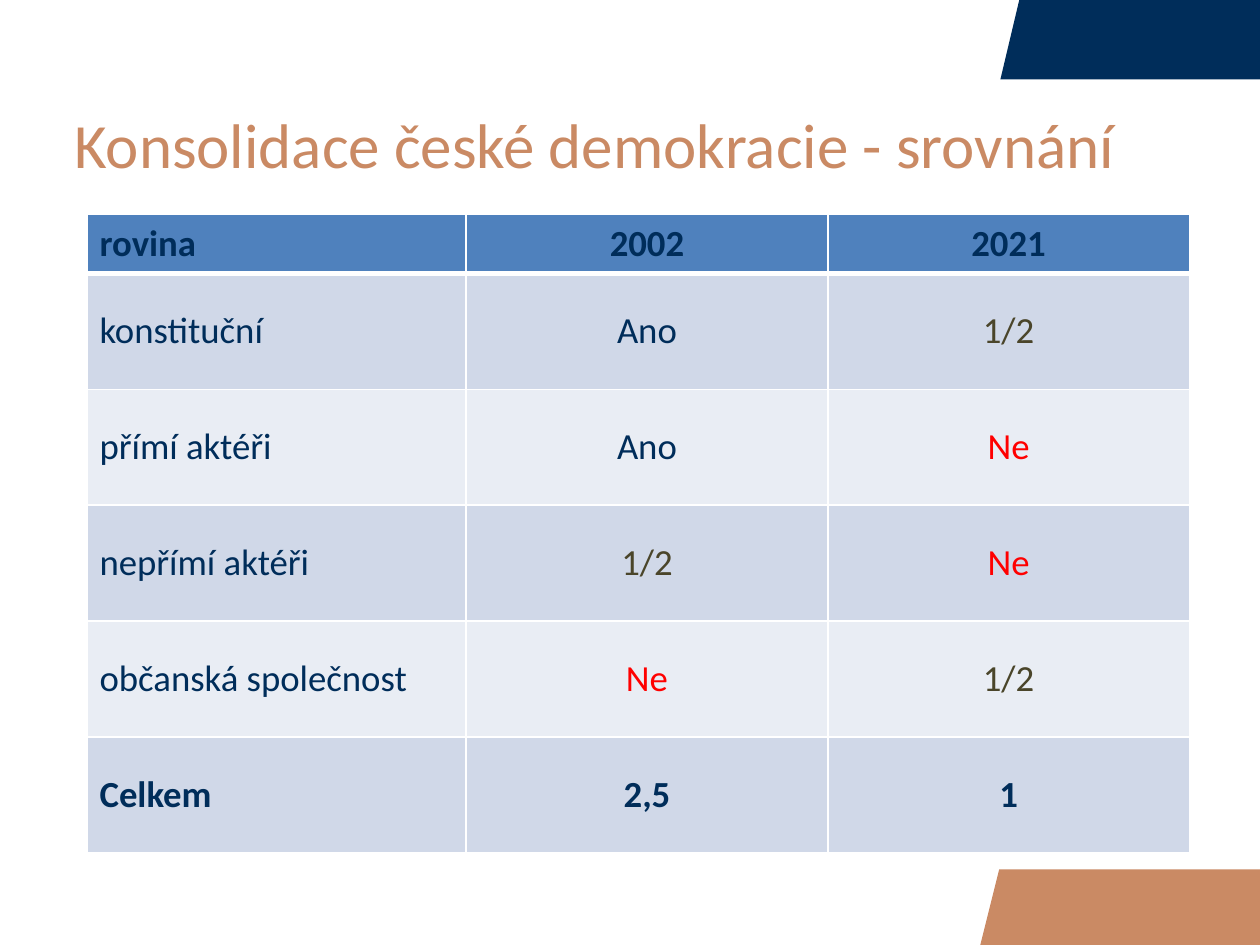
from dataclasses import dataclass

from lxml.etree import SubElement
from pptx import Presentation
from pptx.dml.color import RGBColor
from pptx.enum.text import MSO_ANCHOR as Anchor, PP_ALIGN as Align
from pptx.oxml.ns import qn
from pptx.util import Inches, Pt


@dataclass(frozen=True)
class Theme:
    font: str = "Calibri"
    navy: str = "002D5A"
    copper: str = "CA8A64"
    header: str = "4F81BD"
    band_dark: str = "D0D8E8"
    band_light: str = "E9EDF4"
    half: str = "4A452A"
    negative: str = "FF0000"
    border: str = "FFFFFF"
    title_size: int = 36
    table_size: int = 21


theme = Theme()


def write(frame, text, *, size, color, bold=False, align=Align.LEFT):
    paragraph = frame.paragraphs[0]
    paragraph.alignment = align
    run = paragraph.add_run()
    run.text = text
    run.font.name = theme.font
    run.font.size = Pt(size)
    run.font.bold = bold
    run.font.color.rgb = RGBColor.from_string(color)


def add_border(cell, side, width):
    """Draw one cell edge; side is L, R, T or B and width is in points."""
    line = SubElement(cell._tc.get_or_add_tcPr(), qn(f"a:ln{side}"), w=str(Pt(width)))
    SubElement(SubElement(line, qn("a:solidFill")), qn("a:srgbClr"), val=theme.border)


presentation = Presentation()
presentation.slide_width = Inches(10)
presentation.slide_height = Inches(7.5)
slide = presentation.slides.add_slide(presentation.slide_layouts[6])

# Slanted corner bands
for left, top, bottom, color in (
    (7.94, 0, 0.63, theme.navy),
    (7.78, 6.9, 7.5, theme.copper),
):
    outline = slide.shapes.build_freeform(Inches(left), Inches(bottom), scale=1.0)
    corners = ((left + 0.15, top), (10, top), (10, bottom))
    outline.add_line_segments([(Inches(x), Inches(y)) for x, y in corners])
    band = outline.convert_to_shape()
    band.shadow.inherit = False
    band.fill.solid()
    band.fill.fore_color.rgb = RGBColor.from_string(color)
    band.line.fill.background()

# Title
title = slide.shapes.add_textbox(
    Inches(0.31), Inches(0.92), Inches(9.24), Inches(0.44)
).text_frame
title.word_wrap = True
title.vertical_anchor = Anchor.MIDDLE
title.margin_left = title.margin_right = Inches(0.28)
write(title, "Konsolidace české demokracie - srovnání",
      size=theme.title_size, color=theme.copper)

# Comparison table
comparison = (
    ("rovina", "2002", "2021"),
    ("konstituční", "Ano", "1/2"),
    ("přímí aktéři", "Ano", "Ne"),
    ("nepřímí aktéři", "1/2", "Ne"),
    ("občanská společnost", "Ne", "1/2"),
    ("Celkem", "2,5", "1"),
)
verdict_colors = {"1/2": theme.half, "Ne": theme.negative}
last_row = len(comparison) - 1

table = slide.shapes.add_table(
    len(comparison), 3, Inches(0.69), Inches(1.7), Inches(8.75), Inches(5.06)
).table
for column, width in zip(table.columns, (3.01, 2.87, 2.87)):
    column.width = Inches(width)

for row_index, values in enumerate(comparison):
    is_header = row_index == 0
    table.rows[row_index].height = Inches(0.47 if is_header else 0.92)
    if is_header:
        row_fill = theme.header
    else:
        row_fill = theme.band_dark if row_index % 2 else theme.band_light

    for column_index, value in enumerate(values):
        cell = table.cell(row_index, column_index)
        cell.vertical_anchor = Anchor.MIDDLE
        add_border(cell, "L", 1)
        add_border(cell, "R", 1)
        add_border(cell, "T", 3 if row_index == 1 else 1)
        add_border(cell, "B", 3 if is_header else 1)
        cell.fill.solid()
        cell.fill.fore_color.rgb = RGBColor.from_string(row_fill)
        write(cell.text_frame, value, size=theme.table_size,
              color=verdict_colors.get(value, theme.navy),
              bold=row_index in (0, last_row),
              align=Align.CENTER if column_index else Align.LEFT)

presentation.save("out.pptx")
